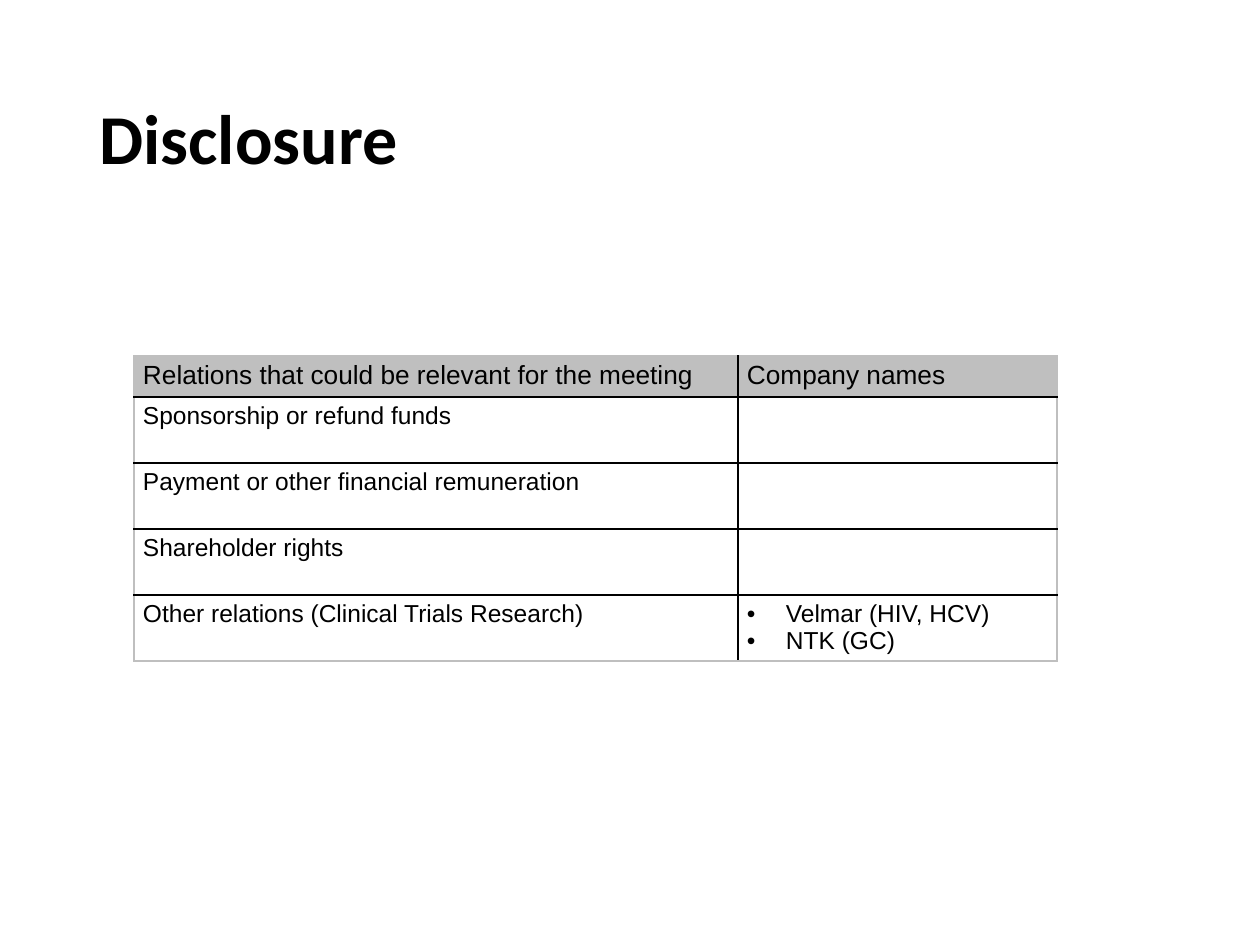
from dataclasses import dataclass

from lxml.etree import SubElement
from pptx import Presentation
from pptx.dml.color import RGBColor
from pptx.enum.text import MSO_ANCHOR, PP_ALIGN
from pptx.oxml import parse_xml
from pptx.oxml.ns import nsdecls, qn
from pptx.util import Emu, Pt

PX = 914400 / 126


def px(length):
    return Emu(round(length * PX))


@dataclass(frozen=True)
class Theme:
    ink: str = "000000"
    grey: str = "BFBFBF"
    title_font: str = "Calibri"
    body_font: str = "Arial"
    title_size: int = 40
    header_size: int = 15
    body_size: int = 14


def write(para, text, *, font, size, color, bold=False, bullet=None, indent=0):
    if bullet:
        properties = para._p.get_or_add_pPr()
        properties.set("marL", str(px(indent)))
        properties.set("indent", str(-px(indent)))
        SubElement(properties, qn("a:buFont"), typeface=font)
        SubElement(properties, qn("a:buChar"), char=bullet)
    span = para.add_run()
    span.text = text
    span.font.name = font
    span.font.size = Pt(size)
    span.font.bold = bold
    span.font.color.rgb = RGBColor.from_string(color)


class Page:
    def __init__(self, deck, theme):
        self.theme = theme
        self.slide = deck.slides.add_slide(deck.slide_layouts[5])

    def title(self, text, left, top, width, height):
        box = self.slide.shapes.title
        box.left, box.top, box.width, box.height = map(px, (left, top, width, height))
        frame = box.text_frame
        frame.word_wrap = True
        frame.vertical_anchor = MSO_ANCHOR.MIDDLE
        para = frame.paragraphs[0]
        para.alignment = PP_ALIGN.LEFT
        para.line_spacing = 0.9
        write(para, text, font=self.theme.title_font, size=self.theme.title_size,
              color=self.theme.ink, bold=True)

    def border(self, cell, colors):
        properties = cell._tc.get_or_add_tcPr()
        for position, (side, color) in enumerate(zip("LRTB", colors)):
            properties.insert(position, parse_xml(
                f'<a:ln{side} {nsdecls("a")} w="{Pt(1)}"><a:solidFill>'
                f'<a:srgbClr val="{color}"/></a:solidFill></a:ln{side}>'))

    def cell(self, cell, content, header):
        theme = self.theme
        cell.margin_left = cell.margin_right = px(9)
        cell.margin_top = cell.margin_bottom = px(5)
        if header:
            cell.fill.solid()
            cell.fill.fore_color.rgb = RGBColor.from_string(theme.grey)
        else:
            cell.fill.background()
        bulleted = isinstance(content, list)
        lines = content if bulleted else [content]
        frame = cell.text_frame
        for number, line in enumerate(lines):
            if line:
                para = frame.add_paragraph() if number else frame.paragraphs[0]
                write(para, line, font=theme.body_font, color=theme.ink,
                      size=theme.header_size if header else theme.body_size,
                      bullet="•" if bulleted else None, indent=39)

    def table(self, rows, left, top, widths, heights):
        grid = self.slide.shapes.add_table(
            len(rows), len(widths), px(left), px(top),
            px(sum(widths)), px(sum(heights))).table
        grid.first_row = grid.horz_banding = False
        for column, width in zip(grid.columns, widths):
            column.width = px(width)
        for row, height in zip(grid.rows, heights):
            row.height = px(height)
        last_row, last_column = len(rows) - 1, len(widths) - 1
        for r, contents in enumerate(rows):
            for c, content in enumerate(contents):
                cell = grid.cell(r, c)
                self.cell(cell, content, header=r == 0)
                outer = (c == 0, c == last_column, r == 0, r == last_row)
                self.border(cell, [self.theme.grey if edge else self.theme.ink
                                   for edge in outer])


def main():
    deck = Presentation()
    deck.slide_width, deck.slide_height = px(1260), px(945)
    page = Page(deck, Theme())
    page.title("Disclosure", 87, 50, 1086, 183)
    page.table(
        [
            ("Relations that could be relevant for the meeting", "Company names"),
            ("Sponsorship or refund funds", ""),
            ("Payment or other financial remuneration", ""),
            ("Shareholder rights", ""),
            ("Other relations (Clinical Trials Research)",
             ["Velmar (HIV, HCV)", "NTK (GC)"]),
        ],
        134, 356, widths=[604, 319], heights=[41] + [66] * 4)
    deck.save("out.pptx")


if __name__ == "__main__":
    main()
